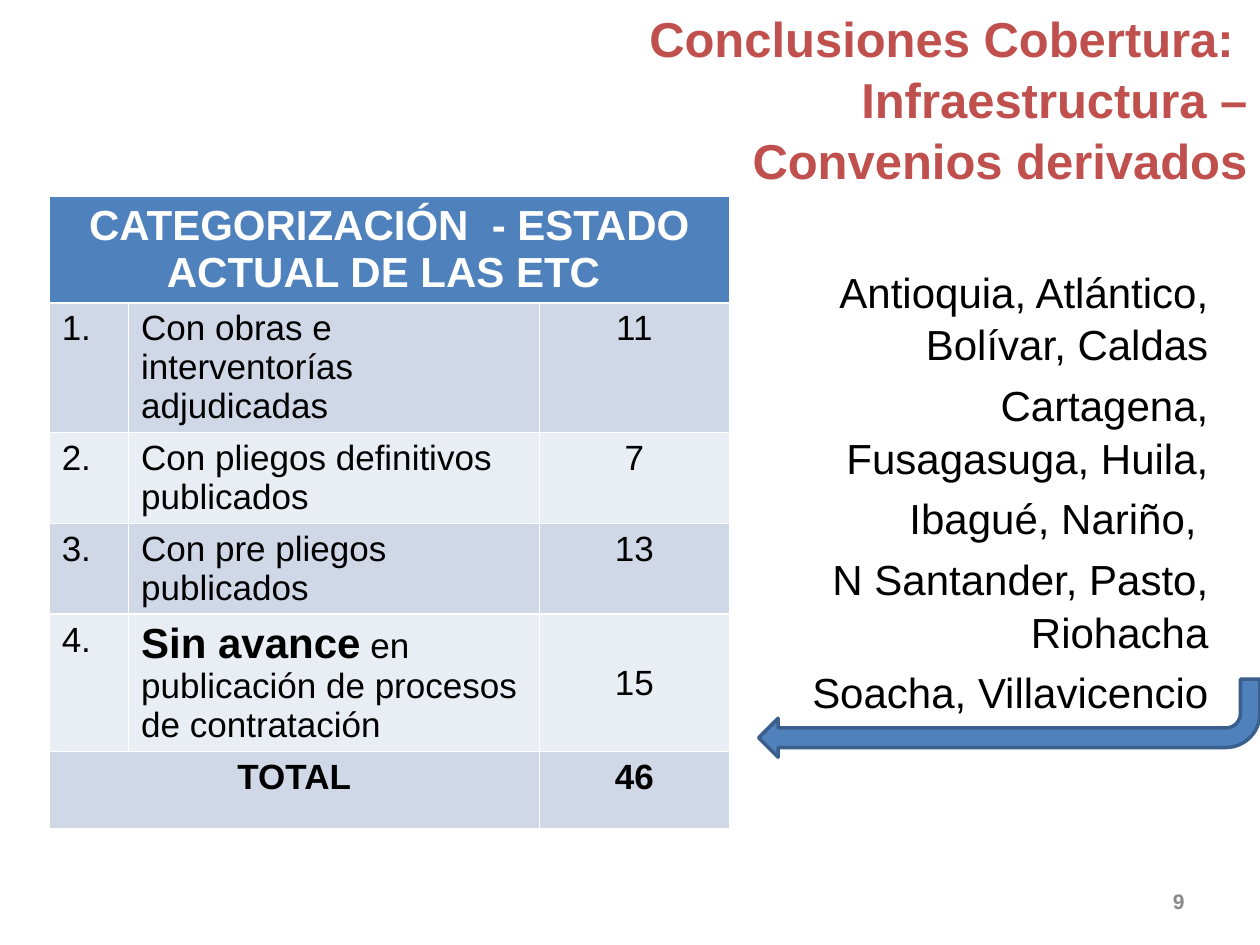
from lxml.etree import SubElement
from pptx import Presentation
from pptx.dml.color import RGBColor
from pptx.enum.shapes import MSO_SHAPE
from pptx.enum.text import MSO_ANCHOR, MSO_AUTO_SIZE, PP_ALIGN
from pptx.oxml.ns import qn
from pptx.util import Inches, Pt

COLORS = {
    "red": "C0504D", "blue": "4F81BD", "edge": "3A5F8C", "gray": "898989",
    "black": "000000", "white": "FFFFFF", "band1": "D0D8E8", "band2": "E9EDF4",
}
LEFT, CENTER, RIGHT = PP_ALIGN.LEFT, PP_ALIGN.CENTER, PP_ALIGN.RIGHT


def rgb(name):
    return RGBColor.from_string(COLORS[name])


class Deck:
    font = "Arial"

    def __init__(self):
        self.prs = Presentation()
        self.prs.slide_width, self.prs.slide_height = Inches(10), Inches(7.5)
        self.s = self.prs.slides.add_slide(self.prs.slide_layouts[1])

    def add_runs(self, p, runs, align, color="black", **formats):
        """Fill a paragraph with (text, format overrides) runs."""
        p.alignment = align
        for text, extra in runs:
            r = p.add_run()
            r.text = text
            r.font.color.rgb = rgb(color)
            for key, value in {"name": self.font, "bold": False, **formats, **extra}.items():
                setattr(r.font, key, value)

    def fill_frame(self, sp, box, lines, gap=0, line_spacing=1, anchor=MSO_ANCHOR.TOP,
                   margin_top=0.05, **formats):
        sp.left, sp.top, sp.width, sp.height = map(Inches, box)
        tf = sp.text_frame
        frame = {"word_wrap": True, "auto_size": MSO_AUTO_SIZE.NONE,
                 "vertical_anchor": anchor, "margin_top": Inches(margin_top)}
        for key, value in frame.items():
            setattr(tf, key, value)
        for i, line in enumerate(lines):
            p = tf.add_paragraph() if i else tf.paragraphs[0]
            pPr = p._p.get_or_add_pPr()
            pPr.set("marL", "0")
            pPr.set("indent", "0")
            SubElement(pPr, qn("a:buNone"))
            p.space_before = Pt(gap if i else 0)
            p.line_spacing = line_spacing
            self.add_runs(p, [(line, {})], RIGHT, **formats)

    def title(self, box, lines, **formats):
        self.fill_frame(self.s.shapes.title, box, lines, **formats)

    def body(self, box, lines, **formats):
        self.fill_frame(self.s.placeholders[1], box, lines, **formats)

    def text(self, box, lines, **formats):
        sp = self.s.shapes.add_textbox(*map(Inches, box))
        self.fill_frame(sp, box, lines, **formats)

    def table(self, left, top, widths, heights):
        box = (left, top, sum(widths), sum(heights))
        table = self.s.shapes.add_table(len(heights), len(widths), *map(Inches, box)).table
        for col, width in zip(table.columns, widths):
            col.width = Inches(width)
        for i, (row, height) in enumerate(zip(table.rows, heights)):
            row.height = Inches(height)
            for cell in row.cells:
                cell.fill.solid()
                cell.fill.fore_color.rgb = rgb("band1" if i % 2 else "band2" if i else "blue")
        return table

    def cell(self, cell, runs, align=LEFT, **formats):
        self.add_runs(cell.text_frame.paragraphs[0], runs, align, **{"size": Pt(20), **formats})

    def bent_arrow(self, box):
        sp = self.s.shapes.add_shape(MSO_SHAPE.BENT_ARROW, *map(Inches, box))
        sp.rotation = 180
        sp.shadow.inherit = False
        sp.fill.solid()
        sp.fill.fore_color.rgb = rgb("blue")
        sp.line.color.rgb = rgb("edge")
        sp.line.width = Pt(2)


def main():
    deck = Deck()
    deck.body((5.94, 1.56, 3.75, 1.56), [
        "Antioquia, Atlántico, Bolívar, Caldas",
        "Cartagena, Fusagasuga, Huila,",
        "Ibagué, Nariño, ",
        "N Santander, Pasto, Riohacha",
        "Soacha, Villavicencio",
    ], gap=4.8, line_spacing=1.04, margin_top=0.54, size=Pt(24))
    deck.title((2.34, 0, 7.66, 1.72), [
        "Conclusiones Cobertura: ", "Infraestructura –", " Convenios derivados",
    ], line_spacing=1.04, color="red", size=Pt(28), bold=True)

    table = deck.table(0.39, 1.56, [0.63, 3.26, 1.51], [0.83, 1.03, 0.72, 0.72, 1.09, 0.61])
    table.cell(0, 0).merge(table.cell(0, 2))
    deck.cell(table.cell(0, 0), [("CATEGORIZACIÓN  - ESTADO ACTUAL DE LAS ETC ", {})],
              CENTER, color="white", size=Pt(24), bold=True)
    states = [
        ([("Con obras e interventorías adjudicadas", {})], 11),
        ([("Con pliegos definitivos publicados", {})], 7),
        ([("Con pre pliegos publicados", {})], 13),
        ([("Sin avance", {"size": Pt(24), "bold": True}),
          (" en publicación de procesos de contratación", {})], 15),
    ]
    for i, (runs, count) in enumerate(states, 1):
        deck.cell(table.cell(i, 0), [(f"{i}.", {})])
        deck.cell(table.cell(i, 1), runs)
        deck.cell(table.cell(i, 2), [(str(count), {})], CENTER)
    table.cell(4, 2).vertical_anchor = MSO_ANCHOR.MIDDLE
    table.cell(5, 0).merge(table.cell(5, 1))
    total = sum(count for _, count in states)
    for col, text in ((0, "TOTAL"), (2, str(total))):
        deck.cell(table.cell(5, col), [(text, {})], CENTER, bold=True)

    deck.bent_arrow((6.02, 5.39, 3.98, 0.62))
    deck.text((7.17, 6.95, 2.33, 0.4), ["9"], anchor=MSO_ANCHOR.MIDDLE,
              color="gray", size=Pt(12), bold=True)
    deck.prs.save("out.pptx")


if __name__ == "__main__":
    main()
